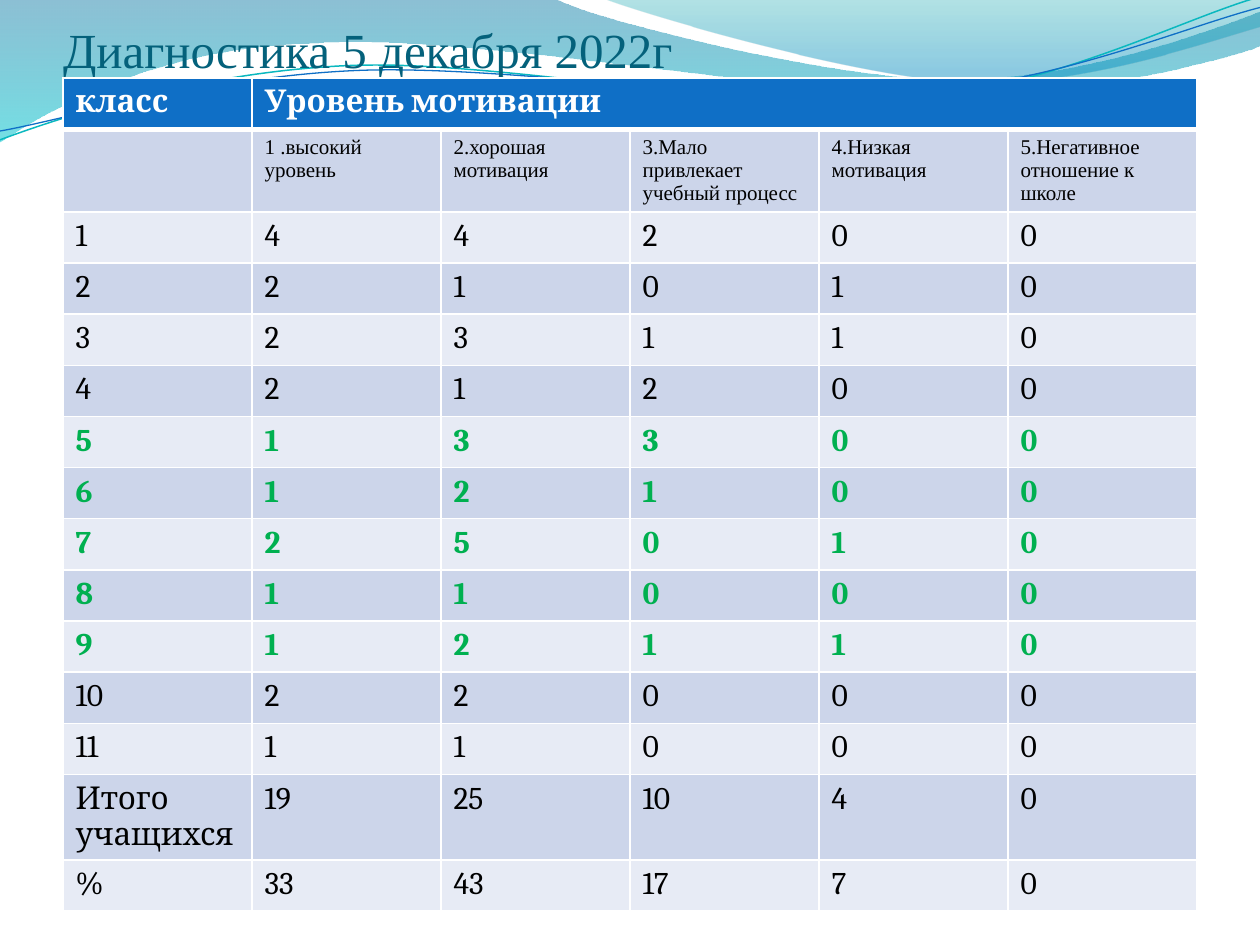
from math import cos, radians, sin

from lxml.etree import SubElement
from pptx import Presentation
from pptx.dml.color import RGBColor
from pptx.enum.text import MSO_ANCHOR, MSO_AUTO_SIZE, PP_ALIGN
from pptx.oxml.ns import qn
from pptx.util import Inches, Pt

BLUE, WHITE, BLACK, GREEN = "0F6FC6", "FFFFFF", "000000", "00B050"
BANDS = ("E7EBF5", "CCD5EA")
SERIF, BODY = "Times New Roman", "Cambria"
TILT = 2.7

LEVELS = ["", "1 .высокий уровень", "2.хорошая мотивация",
          "3.Мало привлекает учебный процесс", "4.Низкая мотивация",
          "5.Негативное отношение к школе"]
RESULTS = [
    ["1", 4, 4, 2, 0, 0],
    ["2", 2, 1, 0, 1, 0],
    ["3", 2, 3, 1, 1, 0],
    ["4", 2, 1, 2, 0, 0],
    ["5", 1, 3, 3, 0, 0],
    ["6", 1, 2, 1, 0, 0],
    ["7", 2, 5, 0, 1, 0],
    ["8", 1, 1, 0, 0, 0],
    ["9", 1, 2, 1, 1, 0],
    ["10", 2, 2, 0, 0, 0],
    ["11", 1, 1, 0, 0, 0],
    ["Итого учащихся", 19, 25, 10, 4, 0],
    ["%", 33, 43, 17, 7, 0],
]
MIDDLE_GRADES = {"5", "6", "7", "8", "9"}

LEFT_WAVE = [
    (0, 0), (4.4, -0.01),
    (4.76, 0.17, 6.64, 0.63, 7.58, 0.63), (8.53, 0.63, 9.58, 0.26, 10, 0.09),
    (10.01, 0.36),
    (9.83, 0.44, 8.7, 0.76, 7.46, 0.75), (6.22, 0.75, 3.82, 0.28, 2.57, 0.34),
    (1.29, 0.36, 0.46, 0.83, -0.01, 1.13), (0, 0)]
RIGHT_WAVE = [
    (4.79, -0.01),
    (5.09, 0.11, 6.82, 0.62, 7.69, 0.65), (8.56, 0.69, 9.61, 0.32, 10, 0.21),
    (10, 0), (4.79, -0.01)]
TEAL_CURVE = [
    (0, 1.11),
    (0.48, 0.93, 1.58, 0.57, 2.77, 0.52), (3.95, 0.47, 5.93, 0.89, 7.13, 0.8),
    (8.33, 0.71, 9.38, 0.15, 9.98, -0.02)]
BLUE_CURVE = [
    (0, 1.04),
    (0.47, 0.96, 1.64, 0.61, 2.83, 0.56), (4.03, 0.51, 5.97, 0.84, 7.17, 0.75),
    (8.36, 0.67, 9.41, 0.21, 10, 0.06)]


def rgb(value):
    """Turn a hex string into a colour."""
    return RGBColor.from_string(value)


def turn(path, center, degrees):
    """Rotate every point of a path clockwise about a center."""
    (cx, cy), c, s = center, cos(radians(degrees)), sin(radians(degrees))
    turned = []
    for part in path:
        pairs = [(x - cx, y - cy) for x, y in zip(part[::2], part[1::2])]
        turned.append(tuple(v for x, y in pairs
                            for v in (cx + x * c - y * s, cy + x * s + y * c)))
    return turned


class SlideBuilder:
    """Holds the style and the current slide."""

    def __init__(self, prs):
        """Start a title-only slide."""
        self.s = prs.slides.add_slide(prs.slide_layouts[5])

    def format(self, tf, size, font, color, bold=False):
        """Format every run of a text frame."""
        for p in tf.paragraphs:
            for r in p.runs:
                r.font.size, r.font.name, r.font.bold = Pt(size), font, bold
                r.font.color.rgb = rgb(color)

    def outline(self, path, close):
        """Add a freeform of straight lines and cubic curves."""
        points = [(Inches(x), Inches(y)) for part in path
                  for x, y in zip(part[::2], part[1::2])]
        builder = self.s.shapes.build_freeform(*points[0])
        builder.add_line_segments(points[1:], close=close)
        sp = builder.convert_to_shape()
        sp.shadow.inherit = False
        lines = iter(list(sp.element.iter(qn("a:lnTo"))))
        for part in path[1:]:
            line = next(lines)
            if len(part) == 6:
                bezier = SubElement(line.getparent(), qn("a:cubicBezTo"))
                line.addprevious(bezier)
                for node in (line, next(lines), next(lines)):
                    bezier.append(node[0])
                    node.getparent().remove(node)
        return sp

    def wave(self, path, stops):
        """Add a translucent wave shaded from top to bottom."""
        sp = self.outline(path, True)
        sp.line.fill.background()
        sp.fill.gradient()
        sp.fill.gradient_angle = 270
        for stop, (position, color, _) in zip(sp.fill.gradient_stops, stops):
            stop.position, stop.color.rgb = position, rgb(color)
        for node, (_, _, opacity) in zip(sp.element.iter(qn("a:srgbClr")), stops):
            SubElement(node, qn("a:alpha"), val=str(opacity * 1000))

    def curve(self, path, center, color, width):
        """Add an open curved line tilted about its center."""
        sp = self.outline(turn(path, center, TILT), False)
        sp.rotation = -TILT
        sp.fill.background()
        sp.line.color.rgb, sp.line.width = rgb(color), Pt(width)

    def title(self, text, left, top, width, height):
        """Place the title in front of the waves."""
        sp = self.s.shapes.title
        sp.element.getparent().append(sp.element)
        sp.left, sp.top, sp.width, sp.height = map(Inches, (left, top, width, height))
        tf = sp.text_frame
        tf.text = text
        tf.word_wrap, tf.auto_size = True, MSO_AUTO_SIZE.NONE
        tf.vertical_anchor = MSO_ANCHOR.BOTTOM
        tf.margin_left = tf.margin_right = tf.margin_bottom = 0
        tf.margin_top = Inches(0.05)
        tf.paragraphs[0].alignment = PP_ALIGN.LEFT
        self.format(tf, 28, SERIF, "04617B")

    def cell(self, cell, text, fill, size=18, font=BODY, color=BLACK, bold=False, rule=1):
        """Fill, border and write one table cell."""
        tcPr = cell._tc.get_or_add_tcPr()
        for side, width in zip("LRTB", (1, 1, 1, rule)):
            ln = SubElement(tcPr, qn(f"a:ln{side}"), w=str(Pt(width)))
            SubElement(SubElement(ln, qn("a:solidFill")), qn("a:srgbClr"), val=WHITE)
        cell.fill.solid()
        cell.fill.fore_color.rgb = rgb(fill)
        if text != "":
            cell.text_frame.text = str(text)
            self.format(cell.text_frame, size, font, color, bold)

    def table(self, left, top, width, height):
        """Add the table of motivation levels by class."""
        rows, cols = len(RESULTS) + 2, len(LEVELS)
        table = self.s.shapes.add_table(
            rows, cols, *map(Inches, (left, top, width, height))).table
        for j, text in enumerate(["класс", "Уровень мотивации"] + [""] * (cols - 2)):
            self.cell(table.cell(0, j), text, BLUE, color=WHITE, bold=True, rule=3)
        table.cell(0, 1).merge(table.cell(0, cols - 1))
        for j, text in enumerate(LEVELS):
            self.cell(table.cell(1, j), text, BANDS[1], 12, SERIF)
        for i, row in enumerate(RESULTS, 2):
            marked = row[0] in MIDDLE_GRADES
            for j, value in enumerate(row):
                self.cell(table.cell(i, j), value, BANDS[i % 2],
                          color=GREEN if marked else BLACK, bold=marked)


def main():
    """Build and save the slide."""
    prs = Presentation()
    prs.slide_width, prs.slide_height = Inches(10), Inches(7.5)
    slide = SlideBuilder(prs)
    slide.wave(LEFT_WAVE, [(0, "0074A1", 45), (1, "00C6CF", 55)])
    slide.wave(RIGHT_WAVE, [(0, "00A1A9", 30), (0.8, "008BBF", 45)])
    slide.curve(TEAL_CURVE, (4.99, 0.58), "0AB8BF", 0.85)
    slide.curve(BLUE_CURVE, (5, 0.59), BLUE, 0.75)
    slide.title("Диагностика 5 декабря 2022г", 0.5, 0.3, 9, 0.32)
    slide.table(0.5, 0.62, 9, 6.09)
    prs.save("out.pptx")


if __name__ == "__main__":
    main()
